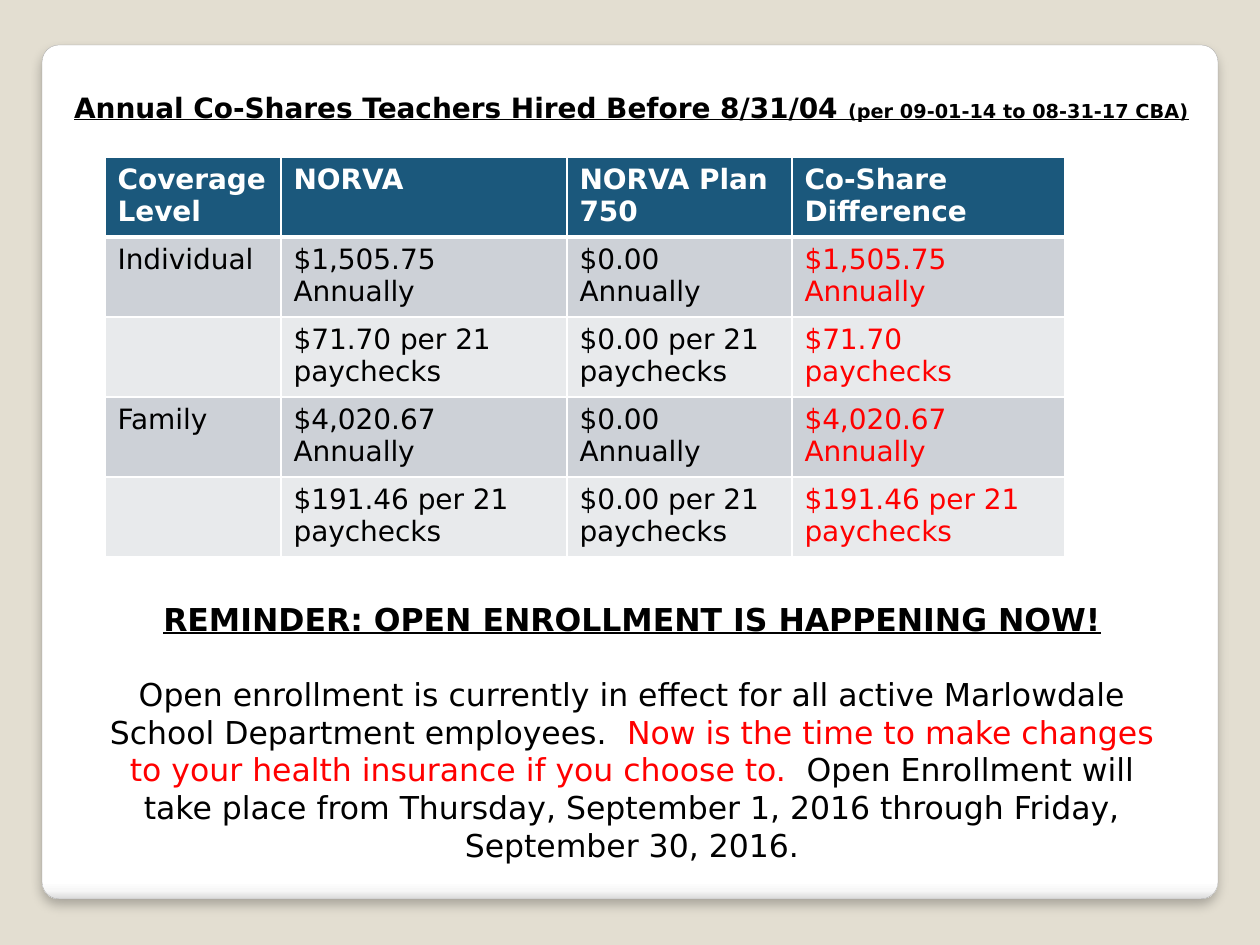
"""Build the slide on annual co-shares and open enrollment."""
from lxml.etree import SubElement
from pptx import Presentation
from pptx.dml.color import RGBColor
from pptx.enum.shapes import MSO_SHAPE
from pptx.enum.text import MSO_ANCHOR, MSO_AUTO_SIZE, PP_ALIGN
from pptx.oxml import parse_xml
from pptx.oxml.ns import nsdecls, qn
from pptx.util import Pt

PX = 914400 / 126
BLACK, WHITE, RED = "000000", "FFFFFF", "FF0000"


def color(code):
    return RGBColor.from_string(code)


def add_run(para, text, size, code, bold=False, under=False):
    run = para.add_run()
    run.text = text
    font = run.font
    font.name = "DejaVu Sans"
    font.size = Pt(size)
    font.bold = bold
    font.underline = under
    font.color.rgb = color(code)


deck = Presentation()
deck.slide_width, deck.slide_height = int(1260 * PX), int(945 * PX)
slide = deck.slides.add_slide(deck.slide_layouts[1])
shapes = slide.shapes
slide.background.fill.solid()
slide.background.fill.fore_color.rgb = color("E3DED1")

card = shapes.add_shape(
    MSO_SHAPE.ROUNDED_RECTANGLE, *[int(n * PX) for n in (42, 45, 1176, 854)])
card.adjustments[0] = 0.02
props = card._element.spPr
stops = "".join(
    f'<a:gs pos="{pos * 1000}"><a:srgbClr val="{code}"/></a:gs>'
    for pos, code in [(0, WHITE), (98, WHITE), (99, "F7F7F7"), (100, "DADADA")])
props.append(parse_xml(
    f'<a:gradFill {nsdecls("a")}><a:gsLst>{stops}</a:gsLst>'
    '<a:lin ang="5400000" scaled="0"/></a:gradFill>'))
card.line.color.rgb = color("A4A4A4")
card.line.width = Pt(0.16)
props.append(parse_xml(
    f'<a:effectLst {nsdecls("a")}><a:outerShdw blurRad="{Pt(6)}" dist="{Pt(4)}" '
    'dir="5400000" algn="t" rotWithShape="0"><a:srgbClr val="000000">'
    '<a:alpha val="25000"/></a:srgbClr></a:outerShdw></a:effectLst>'))
shapes._spTree.insert(2, card._element)

title, body = shapes.title, slide.placeholders[1]
for holder, box in [(title, (33, 84, 1197, 93)), (body, (81, 594, 1102, 280))]:
    holder.left, holder.top, holder.width, holder.height = [int(n * PX) for n in box]
    frame = holder.text_frame
    frame.word_wrap = True
    frame.auto_size = MSO_AUTO_SIZE.SHAPE_TO_FIT_TEXT
    frame.vertical_anchor = MSO_ANCHOR.TOP

head = title.text_frame.paragraphs[0]
head.alignment = PP_ALIGN.CENTER
add_run(head, "Annual Co-Shares Teachers Hired Before 8/31/04 ", 16, BLACK, True, True)
add_run(head, "(per 09-01-14 to 08-31-17 CBA)", 11, BLACK, True, True)

call = body.text_frame.paragraphs[0]
note = body.text_frame.add_paragraph()
for para in (call, note):
    para.alignment = PP_ALIGN.CENTER
    para.space_before = Pt(0)
    indent = para._p.get_or_add_pPr()
    indent.set("marL", "0")
    indent.set("indent", "0")
    SubElement(indent, qn("a:buNone"))
note.space_before = Pt(21)
add_run(call, "REMINDER: OPEN ENROLLMENT IS HAPPENING NOW!", 18, BLACK, True, True)
for text, code in [
    ("Open enrollment is currently in effect for all active Marlowdale "
     "School Department employees.  ", BLACK),
    ("Now is the time to make changes to your health insurance "
     "if you choose to.  ", RED),
    ("Open Enrollment will take place from Thursday, September 1, 2016 "
     "through Friday, September 30, 2016.", BLACK),
]:
    add_run(note, text, 18, code)

rows = [
    ("Coverage Level", "NORVA", "NORVA Plan 750", "Co-Share Difference"),
    ("Individual", "$1,505.75\nAnnually", "$0.00\nAnnually", "$1,505.75 Annually"),
    ("", "$71.70 per 21 paychecks", "$0.00 per 21 paychecks", "$71.70 paychecks"),
    ("Family", "$4,020.67 Annually", "$0.00\nAnnually", "$4,020.67 Annually"),
    ("", "$191.46 per 21 paychecks", "$0.00 per 21 paychecks",
     "$191.46 per 21 paychecks"),
]
widths = (176, 286, 225, 273)
table = shapes.add_table(
    len(rows), len(widths),
    *[int(n * PX) for n in (105, 157, sum(widths), 80 * len(rows))]).table
for col, width in zip(table.columns, widths):
    col.width = int(width * PX)
for r, row in enumerate(rows):
    table.rows[r].height = int(80 * PX)
    for c, text in enumerate(row):
        cell = table.cell(r, c)
        edges = cell._tc.get_or_add_tcPr()
        for side in "LRTB":
            thick = (r, side) in [(0, "B"), (1, "T")]
            edges.append(parse_xml(
                f'<a:ln{side} {nsdecls("a")} w="{Pt(3 if thick else 1)}"><a:solidFill>'
                f'<a:srgbClr val="{WHITE}"/></a:solidFill></a:ln{side}>'))
        cell.fill.solid()
        shade = "1B587C" if r == 0 else ("E8EAEC", "CDD1D7")[r % 2]
        cell.fill.fore_color.rgb = color(shade)
        code = WHITE if r == 0 else RED if c == 3 else BLACK
        frame = cell.text_frame
        for i, line in enumerate(text.split("\n") if text else []):
            para = frame.add_paragraph() if i else frame.paragraphs[0]
            add_run(para, line, 16, code, r == 0)

deck.save("out.pptx")
